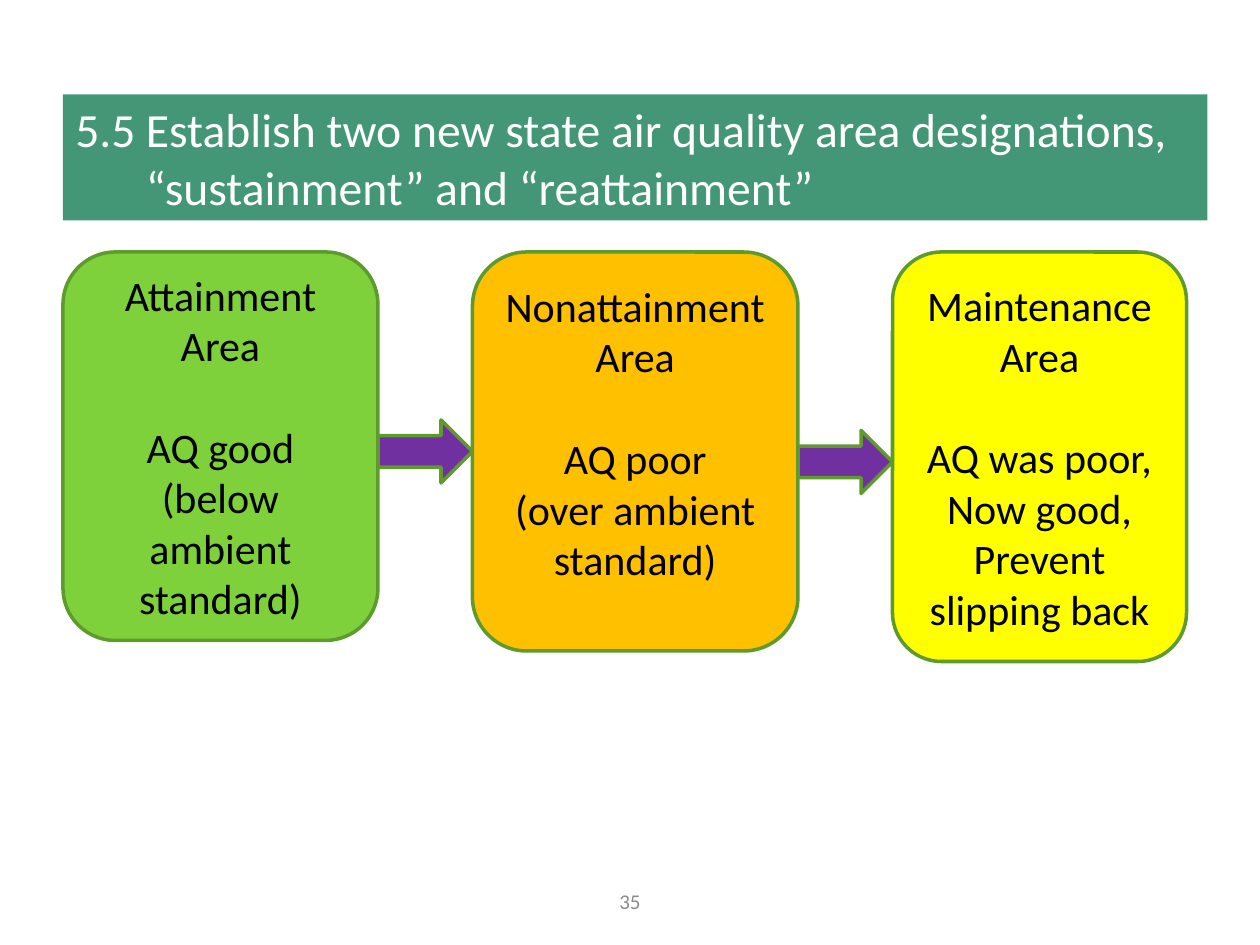
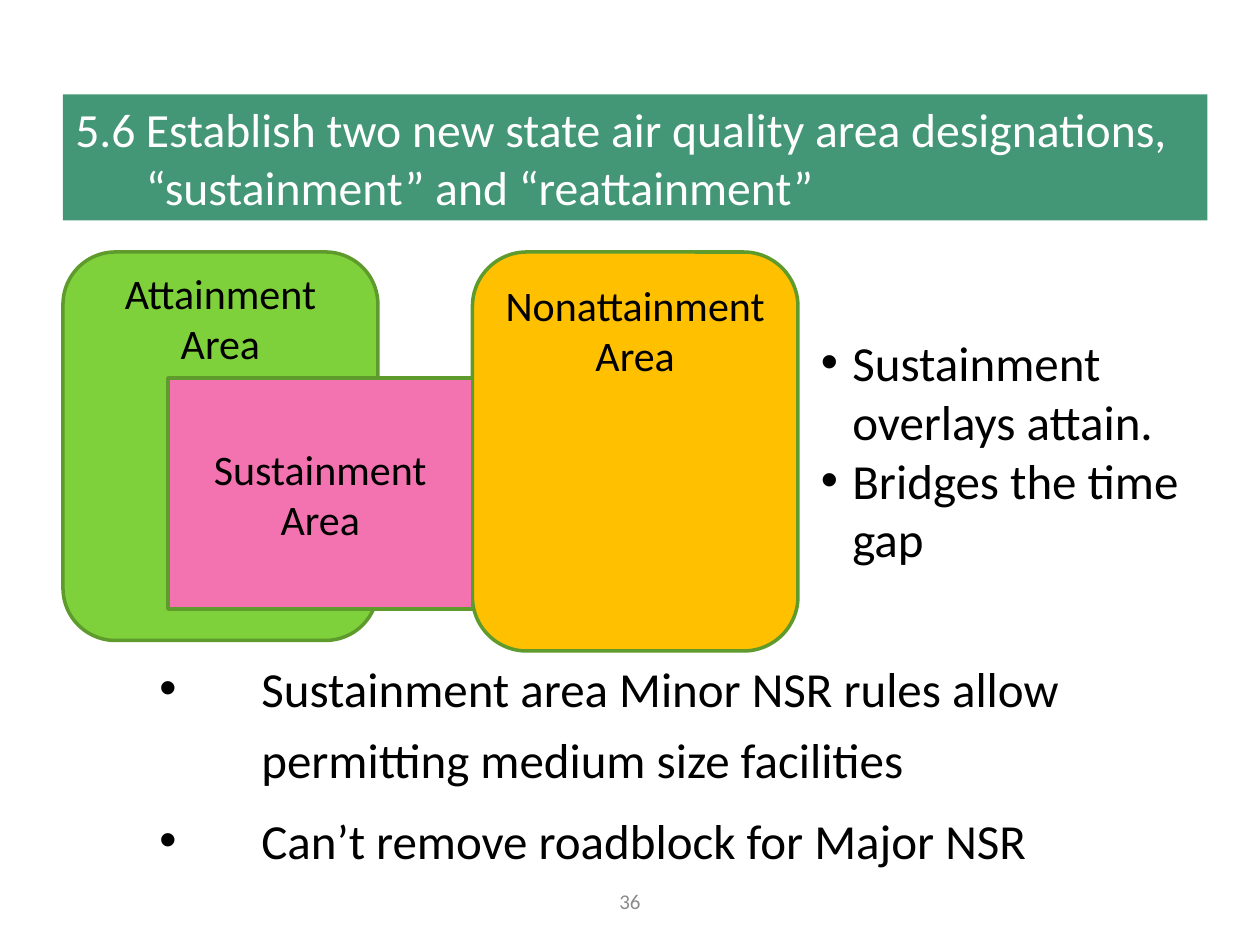
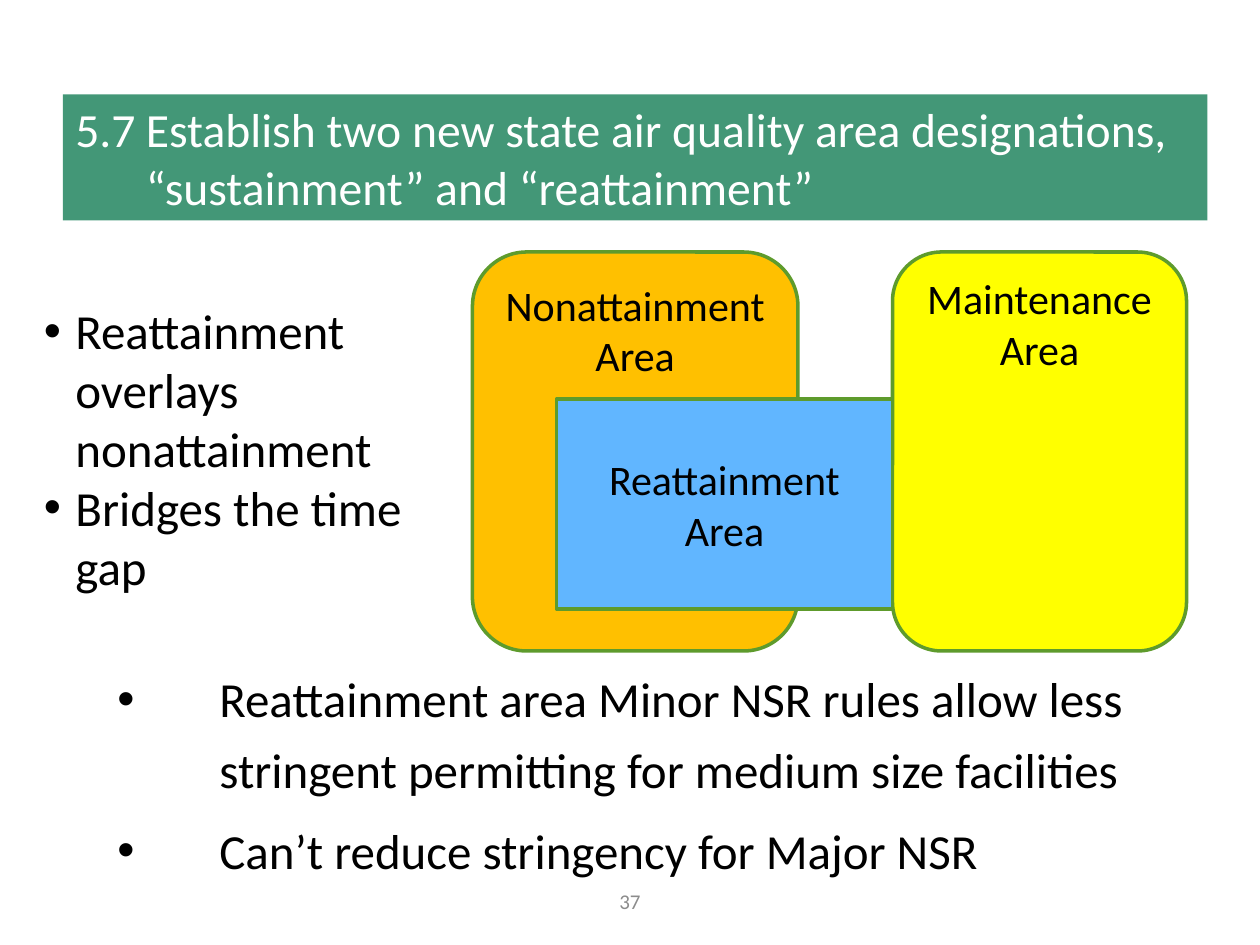
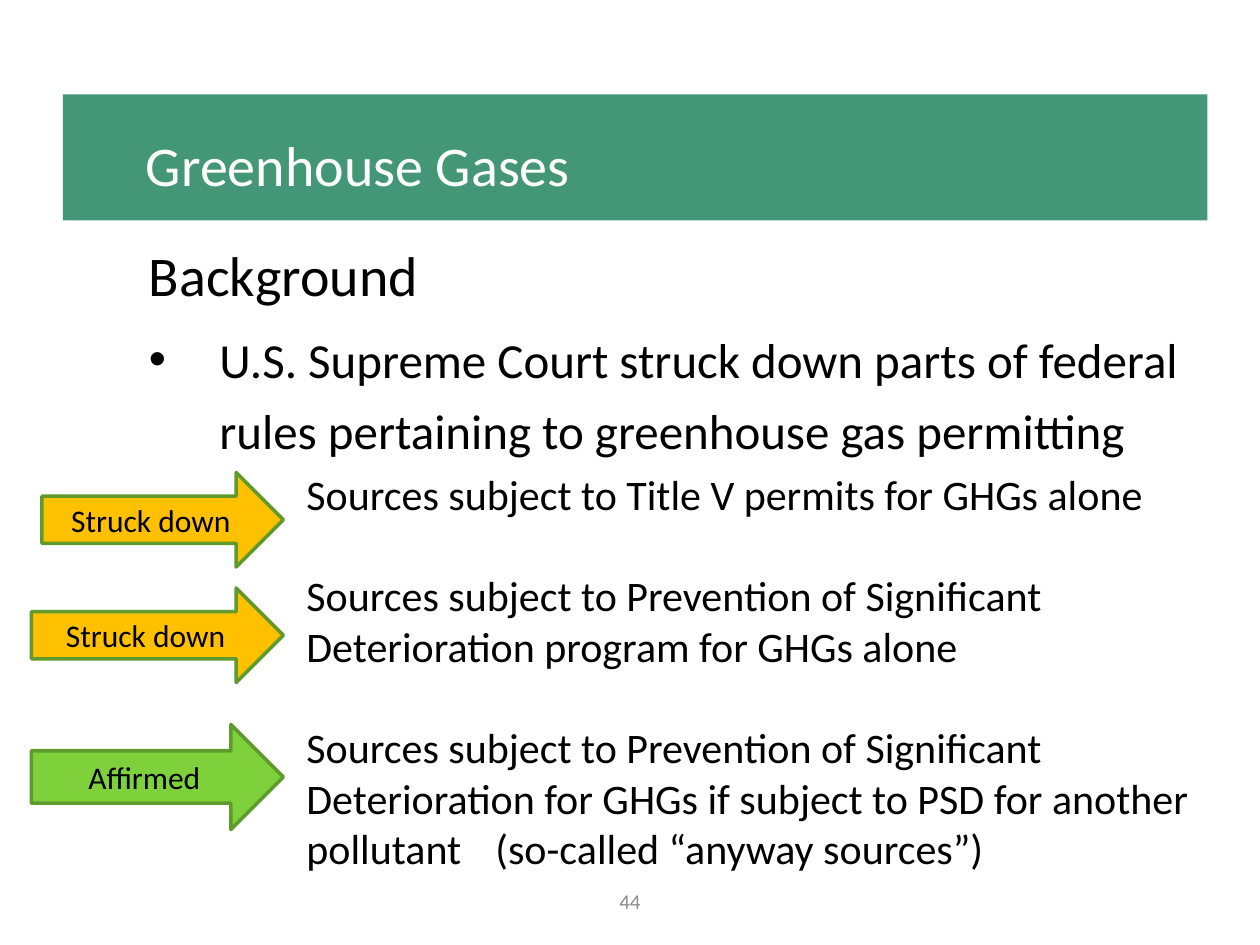
"""Build four slides on state air quality areas and greenhouse gas permitting."""
from dataclasses import dataclass

from lxml.etree import SubElement
from pptx import Presentation
from pptx.dml.color import RGBColor
from pptx.enum.shapes import MSO_SHAPE
from pptx.enum.text import MSO_ANCHOR, PP_ALIGN
from pptx.oxml.ns import qn
from pptx.presentation import Presentation as Deck
from pptx.shapes.autoshape import Shape
from pptx.slide import Slide
from pptx.util import Inches, Pt

WIDTH, HEIGHT = Inches(10), Inches(7.5)
COLUMNS, ROWS = 120, 90
FONT = "Calibri"
BLACK, WHITE, GREY = "000000", "FFFFFF", "8C8C8C"
TEAL, GREEN, ORANGE, YELLOW = "439777", "7FD13B", "FFC000", "FFFF00"
PURPLE, PINK, BLUE, OUTLINE = "7030A0", "F273AF", "61B6FF", "5E9B2C"
LINE_24, LINE_20, LINE_18 = 29.3, 24.4, 22
DESIGNATIONS = "Establish two new state air quality area designations, “sustainment” and “reattainment”"


@dataclass(frozen=True)
class Cell:
    """A place on the grid, in columns and rows."""
    left: float
    top: float
    width: float
    height: float


@dataclass(frozen=True)
class Para:
    """One paragraph with its style; indents are in inches, spacing in points."""
    text: str
    size: float = 24
    color: str = BLACK
    align: PP_ALIGN = PP_ALIGN.LEFT
    indent: float = 0
    hanging: float = 0
    line_spacing: float | None = None
    before: float = 0
    after: float = 0
    bullet: bool = False
    tab: float = 0


@dataclass(frozen=True)
class Panel:
    """A filled, outlined shape with centred lines and room left below them."""
    kind: MSO_SHAPE
    cell: Cell
    fill: str
    lines: tuple[Para, ...] = ()
    room_below: float = 0


def rgb(color: str) -> RGBColor:
    """Turn a hex string into a colour."""
    return RGBColor.from_string(color)


def place(cell: Cell) -> tuple[int, int, int, int]:
    """Turn a grid cell into slide lengths."""
    column, row = WIDTH / COLUMNS, HEIGHT / ROWS
    return (round(cell.left * column), round(cell.top * row),
            round(cell.width * column), round(cell.height * row))


def write(shape: Shape, paras: tuple[Para, ...], anchor: MSO_ANCHOR,
          room_above: float = 0, room_below: float = 0) -> None:
    """Write paragraphs into a shape."""
    frame = shape.text_frame
    frame.word_wrap = True
    frame.vertical_anchor = anchor
    frame.margin_top = Inches(0.05) + Pt(room_above)
    frame.margin_bottom = Inches(0.05) + Pt(room_below)
    for index, para in enumerate(paras):
        paragraph = frame.add_paragraph() if index else frame.paragraphs[0]
        paragraph.alignment = para.align
        paragraph.space_before, paragraph.space_after = Pt(para.before), Pt(para.after)
        if para.line_spacing:
            paragraph.line_spacing = para.line_spacing
        properties = paragraph._p.get_or_add_pPr()
        properties.set("marL", str(Inches(para.indent)))
        properties.set("indent", str(-Inches(para.hanging)))
        if para.bullet:
            SubElement(properties, qn("a:buFont"), typeface="Arial")
            SubElement(properties, qn("a:buChar"), char="•")
        if para.tab:
            stops = SubElement(properties, qn("a:tabLst"))
            SubElement(stops, qn("a:tab"), pos=str(Inches(para.tab)), algn="l")
        run = paragraph.add_run()
        run.text = para.text
        run.font.name, run.font.size = FONT, Pt(para.size)
        run.font.color.rgb = rgb(para.color)


def add_text(slide: Slide, cell: Cell, paras: tuple[Para, ...],
             anchor: MSO_ANCHOR = MSO_ANCHOR.TOP, room_above: float = 0) -> None:
    """Add a text box."""
    write(slide.shapes.add_textbox(*place(cell)), paras, anchor, room_above)


def add_filled(slide: Slide, kind: MSO_SHAPE, cell: Cell, fill: str) -> Shape:
    """Add a flat filled shape without a line."""
    shape = slide.shapes.add_shape(kind, *place(cell))
    shape.shadow.inherit = False
    shape.fill.solid()
    shape.fill.fore_color.rgb = rgb(fill)
    shape.line.fill.background()
    return shape


def add_panels(slide: Slide, *panels: Panel) -> None:
    """Add outlined panels in order."""
    for panel in panels:
        shape = add_filled(slide, panel.kind, panel.cell, panel.fill)
        shape.line.color.rgb = rgb(OUTLINE)
        shape.line.width = Pt(2)
        if panel.lines:
            write(shape, panel.lines, MSO_ANCHOR.MIDDLE, room_below=panel.room_below)


def start_slide(deck: Deck, number: int, title: Para) -> Slide:
    """Add a slide with its title band and page number."""
    slide = deck.slides.add_slide(deck.slide_layouts[6])
    add_text(slide, Cell(41, 83.4, 38, 4.8),
             (Para(str(number), 12, GREY, PP_ALIGN.CENTER),), MSO_ANCHOR.MIDDLE)
    band = add_filled(slide, MSO_SHAPE.RECTANGLE, Cell(6, 9, 109, 12), TEAL)
    write(band, (title,), MSO_ANCHOR.MIDDLE)
    return slide


def section_title(section: str) -> Para:
    """Give the numbered title on area designations."""
    return Para(f"{section}\t{DESIGNATIONS}", 27.2, WHITE, indent=0.56, hanging=0.56, after=6)


def centred(*texts: str, size: float = 24) -> tuple[Para, ...]:
    """Centre lines, with a line's gap after the heading."""
    return tuple(Para(text, size, align=PP_ALIGN.CENTER, before=LINE_24 if index == 1 else 0)
                 for index, text in enumerate(texts))


def rules(*texts: str) -> tuple[Para, ...]:
    """Give the widely spaced bullets on permitting rules."""
    return tuple(Para(text, 28, indent=1.31, hanging=0.81, line_spacing=1.2, after=6, bullet=True)
                 for text in texts)


def remarks(*texts: str) -> tuple[Para, ...]:
    """Give the tight bullets beside a diagram."""
    return tuple(Para(text, 28, indent=0.25, hanging=0.25, bullet=True) for text in texts)


def attainment(*details: str, room_below: float = 0) -> Panel:
    """Describe the attainment area."""
    return Panel(MSO_SHAPE.ROUNDED_RECTANGLE, Cell(6, 24, 30, 37), GREEN,
                 centred("Attainment Area", *details), room_below)


def nonattainment(*details: str, room_below: float = LINE_18) -> Panel:
    """Describe the nonattainment area."""
    return Panel(MSO_SHAPE.ROUNDED_RECTANGLE, Cell(45, 24, 31, 38), ORANGE,
                 centred("Nonattainment Area", *details), room_below)


def maintenance(height: float, *details: str, room_below: float = 0) -> Panel:
    """Describe the maintenance area."""
    return Panel(MSO_SHAPE.ROUNDED_RECTANGLE, Cell(85, 24, 28, height), YELLOW,
                 centred("Maintenance Area", *details), room_below)


def bridge(cell: Cell, fill: str, label: str) -> Panel:
    """Describe an area that bridges two others."""
    return Panel(MSO_SHAPE.RECTANGLE, cell, fill, centred(label))


def build_area_sequence(deck: Deck) -> None:
    """Show the three present areas in sequence."""
    slide = start_slide(deck, 35, section_title("5.5"))
    add_panels(
        slide,
        attainment("AQ good", "(below ambient standard)"),
        nonattainment("AQ poor", "(over ambient standard)"),
        maintenance(39, "AQ was poor,", "Now good,", "Prevent slipping back"),
        *(Panel(MSO_SHAPE.RIGHT_ARROW, Cell(left, top, 9, 6), PURPLE)
          for left, top in ((36, 40), (76, 41))))


def build_sustainment(deck: Deck) -> None:
    """Show the sustainment area."""
    slide = start_slide(deck, 36, section_title("5.6"))
    add_text(slide, Cell(8, 61, 109, 23),
             rules("Sustainment area Minor NSR rules allow permitting medium size facilities",
                   "Can’t remove roadblock for Major NSR"))
    add_panels(slide, attainment(room_below=5 * LINE_24),
               nonattainment(room_below=4 * LINE_24 + LINE_18),
               bridge(Cell(16, 36, 29, 22), PINK, "Sustainment Area"))
    add_text(slide, Cell(77, 27, 40, 31.5),
             remarks("Sustainment overlays attain.", "Bridges the time gap"),
             room_above=LINE_20)


def build_reattainment(deck: Deck) -> None:
    """Show the reattainment area."""
    slide = start_slide(deck, 37, section_title("5.7"))
    add_panels(slide, nonattainment(room_below=4 * LINE_24 + LINE_18),
               maintenance(38, room_below=5 * LINE_24),
               bridge(Cell(53, 38, 32, 20), BLUE, "Reattainment Area"))
    add_text(slide, Cell(3, 24, 40, 37),
             remarks("Reattainment overlays nonattainment", "Bridges the time gap"),
             room_above=LINE_20)
    add_text(slide, Cell(4, 62, 106, 22.5),
             rules("Reattainment area Minor NSR rules allow less stringent permitting "
                   "for medium size facilities", "Can’t reduce stringency for Major NSR"))


def build_greenhouse_gases(deck: Deck) -> None:
    """Show the court's rulings on greenhouse gas permitting."""
    title = Para("Greenhouse Gases", 32, WHITE, indent=0.56, line_spacing=1.2, after=6)
    slide = start_slide(deck, 44, title)
    add_text(slide, Cell(7, 21, 109, 23), (
        Para("Background", 32, indent=0.5, line_spacing=1.2, after=6),
        Para("U.S. Supreme Court struck down parts of federal rules pertaining to "
             "greenhouse gas permitting", 28, indent=1.06, hanging=0.56,
             line_spacing=1.2, after=6, bullet=True)))
    add_text(slide, Cell(28, 44, 89, 40), (
        Para("Sources subject to Title V permits for GHGs alone"),
        Para("Sources subject to Prevention of Significant Deterioration program "
             "for GHGs alone", before=LINE_24),
        Para("Sources subject to Prevention of Significant Deterioration for GHGs if subject "
             "to PSD for another pollutant\t(so-called “anyway sources”)",
             before=LINE_24, tab=1.62)))
    rulings = (
        ("Struck down", Cell(4, 45, 23, 9), ORANGE),
        ("Struck down", Cell(3, 56, 24, 9), ORANGE),
        ("Affirmed", Cell(3, 69, 24, 10), GREEN),
    )
    add_panels(slide, *(Panel(MSO_SHAPE.RIGHT_ARROW, cell, fill, centred(ruling, size=18))
                        for ruling, cell, fill in rulings))


def main() -> None:
    """Build and save the deck."""
    deck = Presentation()
    deck.slide_width, deck.slide_height = WIDTH, HEIGHT
    for build in (build_area_sequence, build_sustainment,
                  build_reattainment, build_greenhouse_gases):
        build(deck)
    deck.save("out.pptx")


if __name__ == "__main__":
    main()
